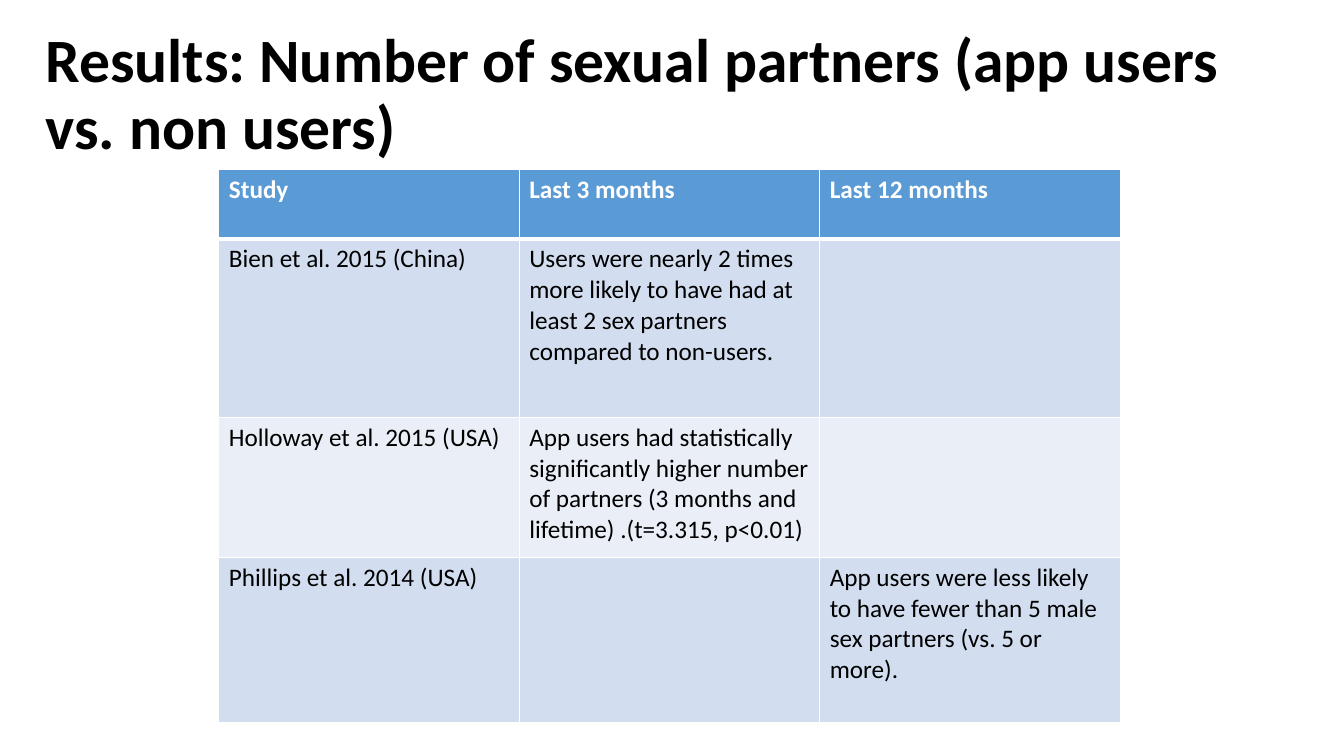
from lxml import etree
from pptx import Presentation
from pptx.dml.color import RGBColor
from pptx.enum.text import MSO_ANCHOR, MSO_AUTO_SIZE, PP_ALIGN
from pptx.oxml.ns import qn
from pptx.util import Inches, Pt

LEFT = PP_ALIGN.LEFT
MIDDLE = MSO_ANCHOR.MIDDLE
NO_AUTOFIT = MSO_AUTO_SIZE.NONE

BLACK = RGBColor(0x00, 0x00, 0x00)
WHITE = RGBColor(0xFF, 0xFF, 0xFF)
HEADER_BLUE = RGBColor(0x5B, 0x9B, 0xD5)
BAND_DARK = RGBColor(0xD2, 0xDE, 0xEF)
BAND_LIGHT = RGBColor(0xEA, 0xEF, 0xF7)
FONT = "Calibri"

STUDIES = [
    ["Study", "Last 3 months", "Last 12 months"],
    ["Bien et al. 2015 (China)",
     "Users were nearly 2 times more likely to have had at least 2 sex partners "
     "compared to non-users.", ""],
    ["Holloway et al. 2015 (USA)",
     "App users had statistically significantly higher number of partners "
     "(3 months and lifetime) .(t=3.315, p<0.01)", ""],
    ["Phillips et al. 2014 (USA)", "",
     "App users were less likely to have fewer than 5 male sex partners "
     "(vs. 5 or more)."],
]
ROW_HEIGHTS = [0.69, 1.77, 1.39, 1.64]
COLUMN_WIDTH = 2.98


def add_text(paragraph, text, size, color, bold):
    run = paragraph.add_run()
    run.text = text
    run.font.name = FONT
    run.font.size = Pt(size)
    run.font.bold = bold
    run.font.color.rgb = color


def add_border(cell, side, width):
    line = etree.SubElement(cell._tc.get_or_add_tcPr(), qn("a:" + side), w=str(Pt(width)))
    fill = etree.SubElement(line, qn("a:solidFill"))
    etree.SubElement(fill, qn("a:srgbClr"), val=str(WHITE))


prs = Presentation()
prs.slide_width = Inches(13.33)
prs.slide_height = Inches(7.5)
slide = prs.slides.add_slide(prs.slide_layouts[5])

# Title
title = slide.shapes.title
title.left, title.top = Inches(0.35), Inches(0.23)
title.width, title.height = Inches(12.07), Inches(1.45)
heading = title.text_frame
heading.word_wrap = True
heading.auto_size = NO_AUTOFIT
heading.vertical_anchor = MIDDLE
heading.paragraphs[0].alignment = LEFT
heading.paragraphs[0].line_spacing = 0.9
add_text(heading.paragraphs[0],
         "Results: Number of sexual partners (app users vs. non users)",
         44, BLACK, True)

# Table of studies
results = slide.shapes.add_table(
    len(STUDIES), len(STUDIES[0]), Inches(2.17), Inches(1.68),
    Inches(COLUMN_WIDTH * len(STUDIES[0])), Inches(sum(ROW_HEIGHTS))).table
for column in results.columns:
    column.width = Inches(COLUMN_WIDTH)

for r, study in enumerate(STUDIES):
    results.rows[r].height = Inches(ROW_HEIGHTS[r])
    is_header = r == 0
    band = HEADER_BLUE if is_header else BAND_DARK if r % 2 else BAND_LIGHT
    for c, finding in enumerate(study):
        cell = results.cell(r, c)
        # Borders go before the fill; the rule under the header is heavier
        for side in ("lnL", "lnR", "lnT", "lnB"):
            heavy = (is_header and side == "lnB") or (r == 1 and side == "lnT")
            add_border(cell, side, 3 if heavy else 1)
        cell.fill.solid()
        cell.fill.fore_color.rgb = band
        if finding:
            add_text(cell.text_frame.paragraphs[0], finding, 18,
                     WHITE if is_header else BLACK, is_header)

prs.save("out.pptx")
